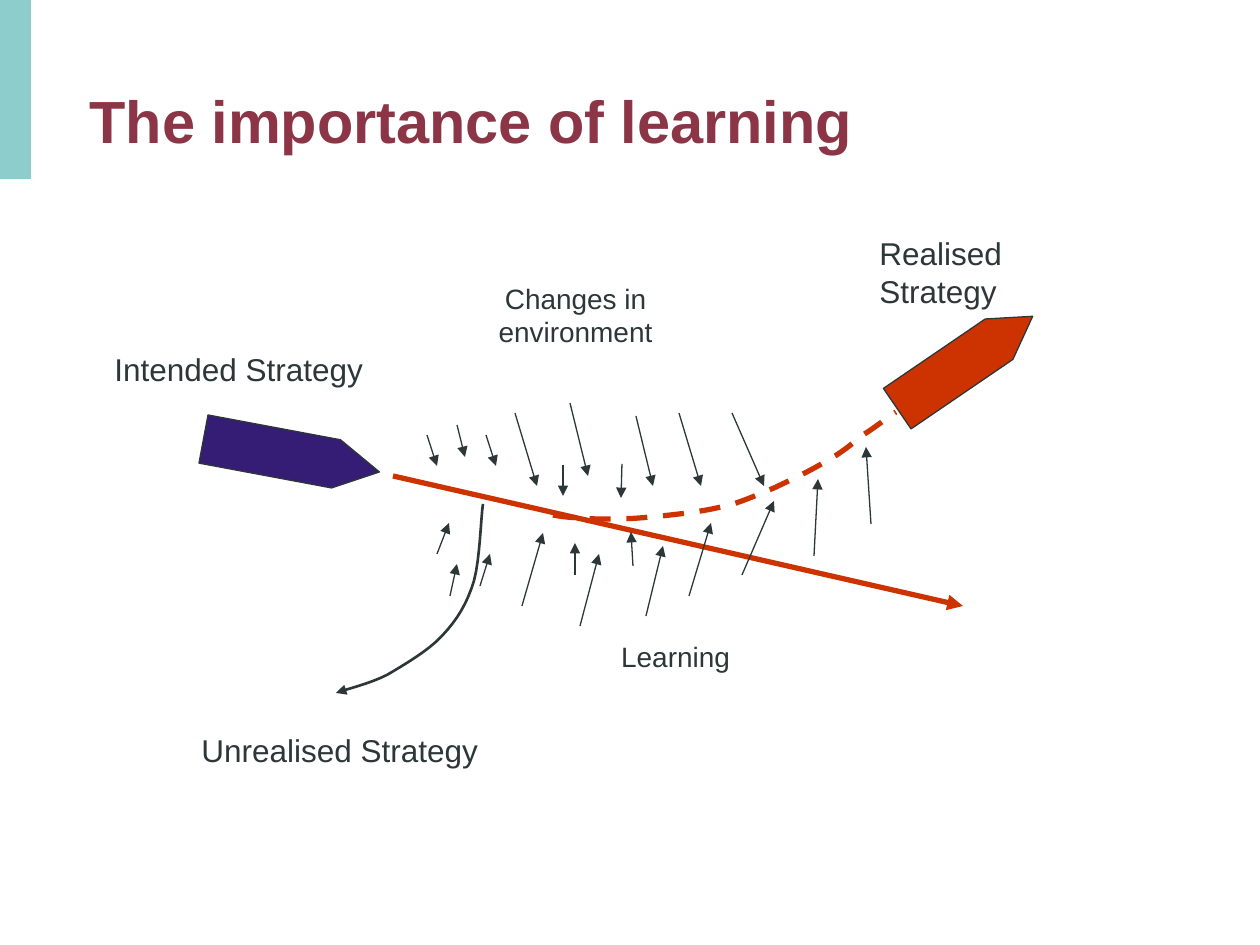
"""Build the slide on intended, realised and unrealised strategy."""
from lxml.etree import SubElement
from pptx import Presentation
from pptx.dml.color import RGBColor
from pptx.enum.dml import MSO_LINE
from pptx.enum.shapes import MSO_CONNECTOR, MSO_SHAPE
from pptx.enum.text import MSO_ANCHOR, PP_ALIGN
from pptx.oxml.ns import qn
from pptx.util import Pt

EMU_PER_PX = 914400 / 126
COLORS = {"teal": "8DCDCC", "maroon": "8C3546", "ink": "2D3737",
          "red": "CC3300", "violet": "351C74"}

LABELS = [
    ("Unrealised Strategy", (189, 725, 302, 50), 18, False),
    ("Intended Strategy", (102, 344, 275, 50), 18, False),
    ("Realised Strategy", (867, 228, 273, 50), 18, False),
    ("Changes in environment", (427, 275, 297, 113), 16, True),
    ("Learning", (527, 633, 297, 63), 16, True),
]
ENVIRONMENT_ARROWS = [
    (427, 435, 437, 466), (457, 425, 465, 457), (486, 435, 496, 466),
    (515, 413, 537, 486), (570, 403, 588, 476), (563, 465, 563, 496),
    (622, 464, 621, 498), (636, 416, 653, 486), (679, 413, 701, 486),
    (732, 413, 764, 486),
]
LEARNING_ARROWS = [
    (437, 554, 449, 523), (450, 596, 457, 564), (480, 586, 490, 554),
    (522, 606, 543, 533), (580, 626, 599, 554), (575, 575, 575, 543),
    (633, 566, 631, 532), (646, 616, 663, 546), (689, 596, 711, 523),
    (742, 575, 774, 501), (814, 556, 818, 479), (871, 524, 866, 447),
]
UNREALISED_PATH = [
    (483, 504), (481, 517), (480, 559), (474, 581), (467, 604), (457, 620),
    (442, 636), (428, 651), (404, 665), (387, 675), (369, 684), (347, 689),
    (336, 693),
]
REALISED_PATH = [
    (553, 515), (561, 517), (585, 519), (601, 519), (617, 519), (633, 519),
    (651, 517), (672, 515), (701, 512), (721, 507), (741, 503), (756, 495),
    (774, 488), (791, 480), (810, 471), (825, 462), (840, 454), (852, 444),
    (863, 435), (876, 427), (888, 417), (896, 412),
]


def emu(*lengths):
    return [round(n * EMU_PER_PX) for n in lengths]


def rgb(name):
    return RGBColor.from_string(COLORS[name])


def bezier(points, steps=8):
    """Return points along a chain of cubic curves, after its start."""
    curve = []
    for i in range(0, len(points) - 1, 3):
        for n in range(1, steps + 1):
            t = n / steps
            weights = ((1 - t) ** 3, 3 * t * (1 - t) ** 2,
                       3 * t * t * (1 - t), t ** 3)
            curve.append([sum(w * p[axis] for w, p in zip(weights, points[i:i + 4]))
                          for axis in (0, 1)])
    return curve


class Painter:
    def __init__(self, slide, font="Arial"):
        self.slide = slide
        self.shapes = slide.shapes
        self.font = font

    def run(self, p, text, size, color, bold=False):
        r = p.add_run()
        r.text = text
        r.font.name = self.font
        r.font.size = Pt(size)
        r.font.bold = bold
        r.font.color.rgb = rgb(color)

    def stroke(self, sp, color, width, head=False):
        sp.line.color.rgb = rgb(color)
        sp.line.width = Pt(width)
        if head:
            SubElement(sp.line._get_or_add_ln(), qn("a:tailEnd"), type="triangle")

    def title(self, text, box):
        sp = self.shapes.title
        sp.left, sp.top, sp.width, sp.height = emu(*box)
        tf = sp.text_frame
        tf.vertical_anchor = MSO_ANCHOR.BOTTOM
        p = tf.paragraphs[0]
        p.alignment = PP_ALIGN.LEFT
        self.run(p, text, 34, "maroon", True)

    def label(self, text, box, size, centred):
        tf = self.shapes.add_textbox(*emu(*box)).text_frame
        tf.word_wrap = centred
        p = tf.paragraphs[0]
        p.alignment = PP_ALIGN.CENTER if centred else PP_ALIGN.LEFT
        self.run(p, text, size, "ink")

    def block(self, kind, box, fill, outline=None, rotation=0, adjust=None):
        sp = self.shapes.add_shape(kind, *emu(*box))
        sp.shadow.inherit = False
        sp.fill.solid()
        sp.fill.fore_color.rgb = rgb(fill)
        sp.rotation = rotation
        if adjust is not None:
            sp.adjustments[0] = adjust
        if outline:
            self.stroke(sp, outline, 0.75)
        else:
            sp.line.fill.background()

    def arrow(self, ends, color="ink", width=0.75):
        line = self.shapes.add_connector(MSO_CONNECTOR.STRAIGHT, *emu(*ends))
        self.stroke(line, color, width, head=True)
        SubElement(line._element.spPr, qn("a:effectLst"))

    def curve(self, points, color, width, head=False, dash=None):
        builder = self.shapes.build_freeform(*emu(*points[0]))
        builder.add_line_segments([emu(*p) for p in bezier(points)], close=False)
        sp = builder.convert_to_shape()
        sp.shadow.inherit = False
        sp.fill.background()
        if dash:
            sp.line.dash_style = dash
        self.stroke(sp, color, width, head)


def main():
    prs = Presentation()
    prs.slide_width, prs.slide_height = emu(1260, 945)
    s = Painter(prs.slides.add_slide(prs.slide_layouts[5]))

    s.block(MSO_SHAPE.RECTANGLE, (0, 0, 31, 179), "teal")
    s.title("The importance of learning", (77, 42, 1160, 120))
    s.curve(UNREALISED_PATH, "ink", 1.5, head=True)
    s.arrow((393, 476, 963, 606), "red", 3)
    s.block(MSO_SHAPE.PENTAGON, (202, 431, 179, 49), "violet", "ink", 10.6, 0.9)
    for ends in ENVIRONMENT_ARROWS + LEARNING_ARROWS:
        s.arrow(ends)
    s.curve(REALISED_PATH, "red", 3, dash=MSO_LINE.DASH)
    s.block(MSO_SHAPE.PENTAGON, (883, 338, 164, 49), "red", "ink", 325.7, 0.83)
    for label in LABELS:
        s.label(*label)

    prs.save("out.pptx")


if __name__ == "__main__":
    main()
